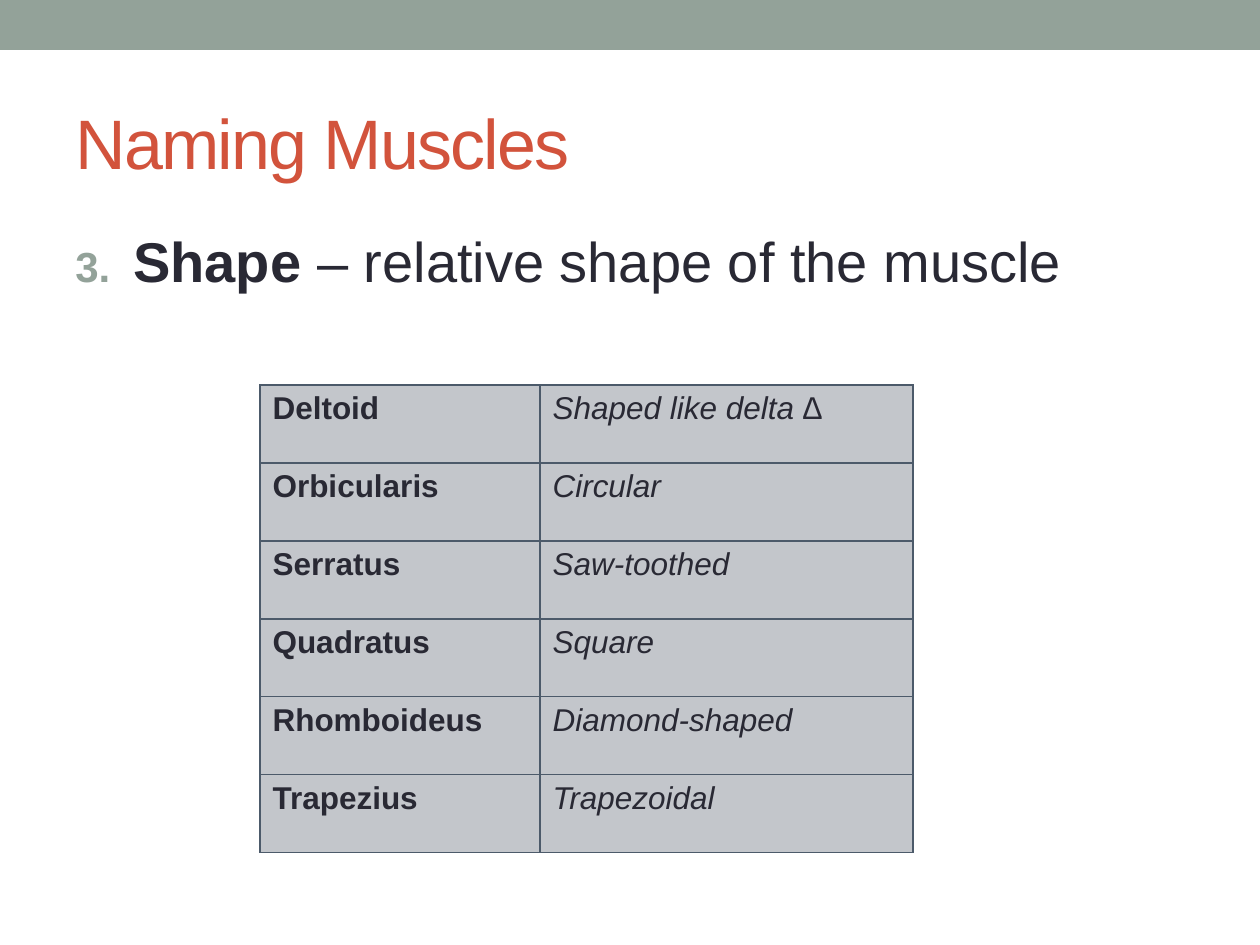
from lxml.etree import SubElement
from pptx import Presentation
from pptx.dml.color import RGBColor
from pptx.enum.shapes import MSO_SHAPE
from pptx.enum.text import MSO_ANCHOR
from pptx.oxml.ns import qn
from pptx.util import Emu, Pt

PX = 914400 // 126
SAGE, RUST, INK = "93A299", "D2533C", "292934"
CELL_FILL, CELL_BORDER = "C3C6CB", "4C5A6A"
MUSCLES = [
    ("Deltoid", "Shaped like delta ∆"),
    ("Orbicularis", "Circular"),
    ("Serratus", "Saw-toothed"),
    ("Quadratus", "Square"),
    ("Rhomboideus", "Diamond-shaped"),
    ("Trapezius", "Trapezoidal"),
]


def px(*lengths):
    return [Emu(length * PX) for length in lengths]


def color(hex_text):
    return RGBColor.from_string(hex_text)


def add_text(para, text, size, fill=INK, bold=False, italic=False, spacing=0):
    span = para.add_run()
    span.text = text
    font = span.font
    font.name, font.size = "Arial", Pt(size)
    font.bold, font.italic = bold, italic
    font.color.rgb = color(fill)
    if spacing:
        font._element.set("spc", str(spacing * 100))


def number_paragraph(para, start, indent, fill, percent):
    props = para._p.get_or_add_pPr()
    props.set("marL", str(indent * PX))
    props.set("indent", str(-indent * PX))
    tint = SubElement(props, qn("a:buClr"))
    SubElement(tint, qn("a:srgbClr"), val=fill)
    SubElement(props, qn("a:buSzPct"), val=str(percent * 1000))
    SubElement(props, qn("a:buFont"), typeface="Arial")
    SubElement(props, qn("a:buAutoNum"), type="arabicPeriod", startAt=str(start))


def border_cell(cell, fill, points):
    props = cell._tc.get_or_add_tcPr()
    for index, side in enumerate(("lnL", "lnR", "lnT", "lnB")):
        line = SubElement(props, qn(f"a:{side}"), w=str(Pt(points)))
        solid = SubElement(line, qn("a:solidFill"))
        SubElement(solid, qn("a:srgbClr"), val=fill)
        props.insert(index, line)


class SlideBuilder:
    """Draws the elements of one slide in its style."""

    def __init__(self, deck):
        self.slide = deck.slides.add_slide(deck.slide_layouts[6])

    def band(self, left, top, width, height):
        band = self.slide.shapes.add_shape(
            MSO_SHAPE.RECTANGLE, *px(left, top, width, height))
        band.shadow.inherit = False
        band.fill.solid()
        band.fill.fore_color.rgb = color(SAGE)
        band.line.fill.background()

    def text_box(self, left, top, width, height, anchor=MSO_ANCHOR.TOP):
        """Add an empty text box and return its first paragraph."""
        box = self.slide.shapes.add_textbox(*px(left, top, width, height))
        frame = box.text_frame
        frame.word_wrap = True
        frame.vertical_anchor = anchor
        return frame.paragraphs[0]

    def title(self, text):
        para = self.text_box(63, 73, 1134, 136, MSO_ANCHOR.MIDDLE)
        add_text(para, text, 40, RUST, spacing=-1)

    def numbered_point(self, number, term, meaning):
        para = self.text_box(63, 220, 1134, 672)
        para.space_before = Pt(3)
        number_paragraph(para, number, 58, SAGE, 75)
        add_text(para, f"{term} ", 32, bold=True)
        add_text(para, meaning, 32)

    def table(self, left, top, widths, row_height, rows):
        frame = self.slide.shapes.add_table(
            len(rows), len(widths),
            *px(left, top, sum(widths), row_height * len(rows)))
        table = frame.table
        table.first_row = table.horz_banding = False
        for column, width in zip(table.columns, px(*widths)):
            column.width = width
        for row, texts in zip(table.rows, rows):
            for index, (cell, text) in enumerate(zip(row.cells, texts)):
                cell.fill.solid()
                cell.fill.fore_color.rgb = color(CELL_FILL)
                border_cell(cell, CELL_BORDER, 0.75)
                add_text(cell.text_frame.paragraphs[0], text, 18,
                         bold=index == 0, italic=index == 1)


def main():
    deck = Presentation()
    deck.slide_width, deck.slide_height = px(1260, 945)
    slide = SlideBuilder(deck)
    slide.band(0, 0, 1260, 50)
    slide.title("Naming Muscles")
    slide.numbered_point(3, "Shape", "– relative shape of the muscle")
    slide.table(260, 385, (280, 373), 78, MUSCLES)
    deck.save("out.pptx")


if __name__ == "__main__":
    main()
